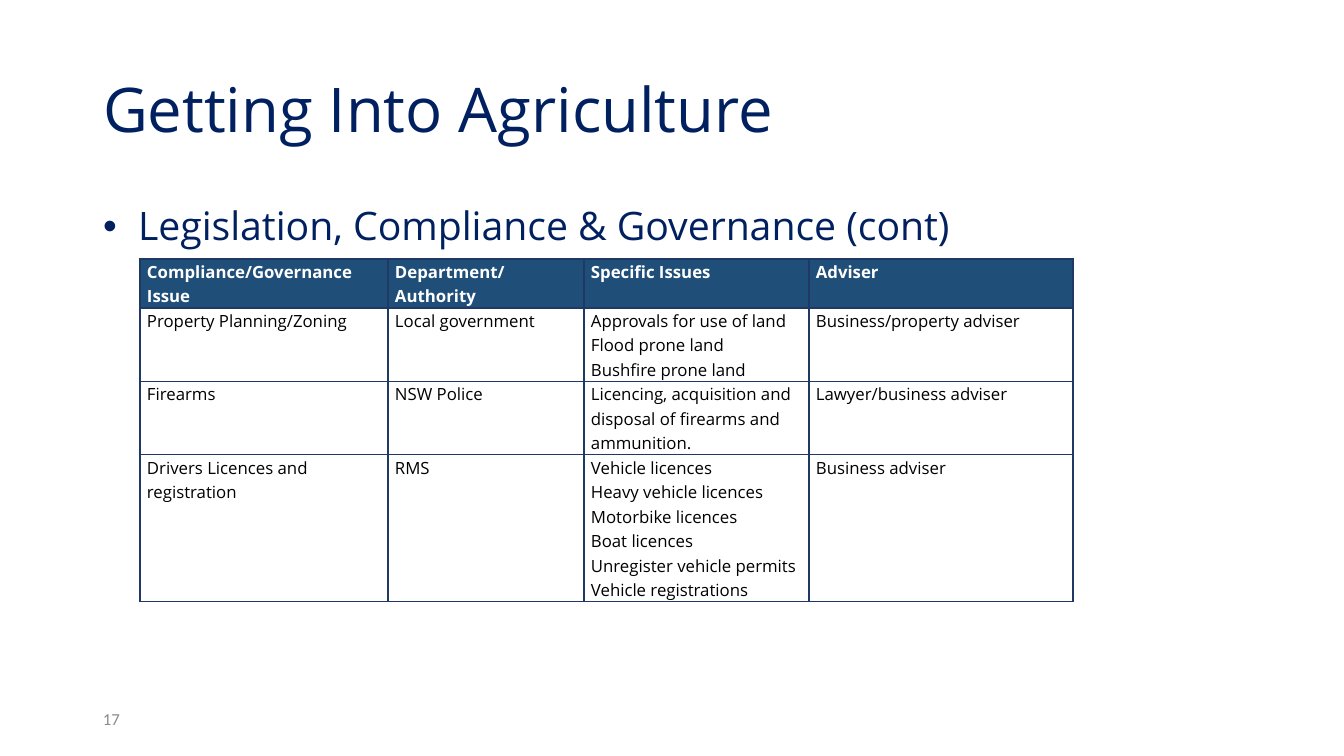
from lxml import etree
from pptx import Presentation
from pptx import util as u
from pptx.dml.color import RGBColor
from pptx.enum import text
from pptx.oxml import ns

# Content
TITLE = "Getting Into Agriculture"
TOPIC = "Legislation, Compliance & Governance (cont)"
PAGE = "17"
ISSUES = [
    (["Compliance/Governance Issue"], ["Department/Authority"],
     ["Specific Issues"], ["Adviser"]),
    (["Property Planning/Zoning"], ["Local government"],
     ["Approvals for use of land", "Flood prone land", "Bushfire prone land"],
     ["Business/property adviser"]),
    (["Firearms"], ["NSW Police"],
     ["Licencing, acquisition and disposal of firearms and ammunition."],
     ["Lawyer/business adviser"]),
    (["Drivers Licences and registration"], ["RMS"],
     ["Vehicle licences", "Heavy vehicle licences", "Motorbike licences",
      "Boat licences", "Unregister vehicle permits", "Vehicle registrations"],
     ["Business adviser"]),
]

# Layout, in px
SLIDE = (1344, 756)
TITLE_BOX = (93, 40, 1159, 146)
TOPIC_BOX = (93, 202, 1159, 480)
PAGE_BOX = (93, 699, 302, 40)
TABLE_AT = (140, 259)
COLUMNS = [248, 196, 225, 264]
ROW_LINES = [2, 3, 3, 6]
LINE = 24
CELL_INSET = 7
BULLET_INDENT = 35

COLORS = {"navy": "002060", "header": "1F4E79", "border": "1F3864",
          "white": "FFFFFF", "black": "000000", "gray": "8C8C8C"}
FORMATS = {
    "title": {"name": "Open Sans", "size": u.Pt(44), "bold": False},
    "topic": {"name": "Open Sans", "size": u.Pt(28), "bold": False},
    "page": {"name": "Calibri", "size": u.Pt(12), "bold": False},
    "header": {"name": "Open Sans", "size": u.Pt(12), "bold": True},
    "cell": {"name": "Open Sans", "size": u.Pt(12), "bold": False},
}


def px(value):
    return u.Inches(value / 100.8)


def place(part, box):
    part.left, part.top, part.width, part.height = map(px, box)


def write(frame, lines, style, color, spacing=1.0):
    frame.word_wrap = True
    for i, line in enumerate(lines):
        paragraph = frame.paragraphs[0] if i == 0 else frame.add_paragraph()
        paragraph.alignment = text.PP_ALIGN.LEFT
        paragraph.line_spacing = spacing
        paragraph.space_before = u.Pt(0)
        run = paragraph.add_run()
        run.text = line
        for key, value in FORMATS[style].items():
            setattr(run.font, key, value)
        run.font.color.rgb = RGBColor.from_string(COLORS[color])


def add_borders(cell):
    props = cell._tc.get_or_add_tcPr()
    for side in ("a:lnL", "a:lnR", "a:lnT", "a:lnB"):
        edge = etree.SubElement(props, ns.qn(side), w=str(u.Pt(1)))
        fill = etree.SubElement(edge, ns.qn("a:solidFill"))
        etree.SubElement(fill, ns.qn("a:srgbClr"), val=COLORS["border"])


def add_issue_table(slide):
    heights = [LINE * count + 1 for count in ROW_LINES]
    frame = slide.shapes.add_table(
        len(ISSUES), len(COLUMNS),
        *map(px, (*TABLE_AT, sum(COLUMNS), sum(heights))))
    table = frame.table
    table.horz_banding = False
    for column, width in zip(table.columns, COLUMNS):
        column.width = px(width)
    for r, (row, height) in enumerate(zip(ISSUES, heights)):
        table.rows[r].height = px(height)
        for c, lines in enumerate(row):
            cell = table.cell(r, c)
            cell.margin_left = cell.margin_right = px(CELL_INSET)
            cell.margin_top = cell.margin_bottom = 0
            add_borders(cell)
            if r == 0:
                cell.fill.solid()
                cell.fill.fore_color.rgb = RGBColor.from_string(COLORS["header"])
                write(cell.text_frame, lines, "header", "white", 1.07)
            else:
                cell.fill.background()
                write(cell.text_frame, lines, "cell", "black", 1.07)


def main():
    deck = Presentation()
    deck.slide_width, deck.slide_height = map(px, SLIDE)
    slide = deck.slides.add_slide(deck.slide_layouts[1])

    # Title
    title = slide.shapes.title
    place(title, TITLE_BOX)
    title.text_frame.vertical_anchor = text.MSO_ANCHOR.MIDDLE
    write(title.text_frame, [TITLE], "title", "navy", 0.9)

    # Bulleted topic
    topic = slide.placeholders[1]
    place(topic, TOPIC_BOX)
    write(topic.text_frame, [TOPIC], "topic", "navy", 0.9)
    props = topic.text_frame.paragraphs[0]._p.get_or_add_pPr()
    props.set("marL", str(px(BULLET_INDENT)))
    props.set("indent", str(-px(BULLET_INDENT)))
    etree.SubElement(props, ns.qn("a:buFont"), typeface="Arial")
    etree.SubElement(props, ns.qn("a:buChar"), char="•")

    # Compliance issues
    add_issue_table(slide)

    # Page number
    page = slide.shapes.add_textbox(*map(px, PAGE_BOX))
    page.text_frame.vertical_anchor = text.MSO_ANCHOR.MIDDLE
    write(page.text_frame, [PAGE], "page", "gray")

    deck.save("out.pptx")


if __name__ == "__main__":
    main()
